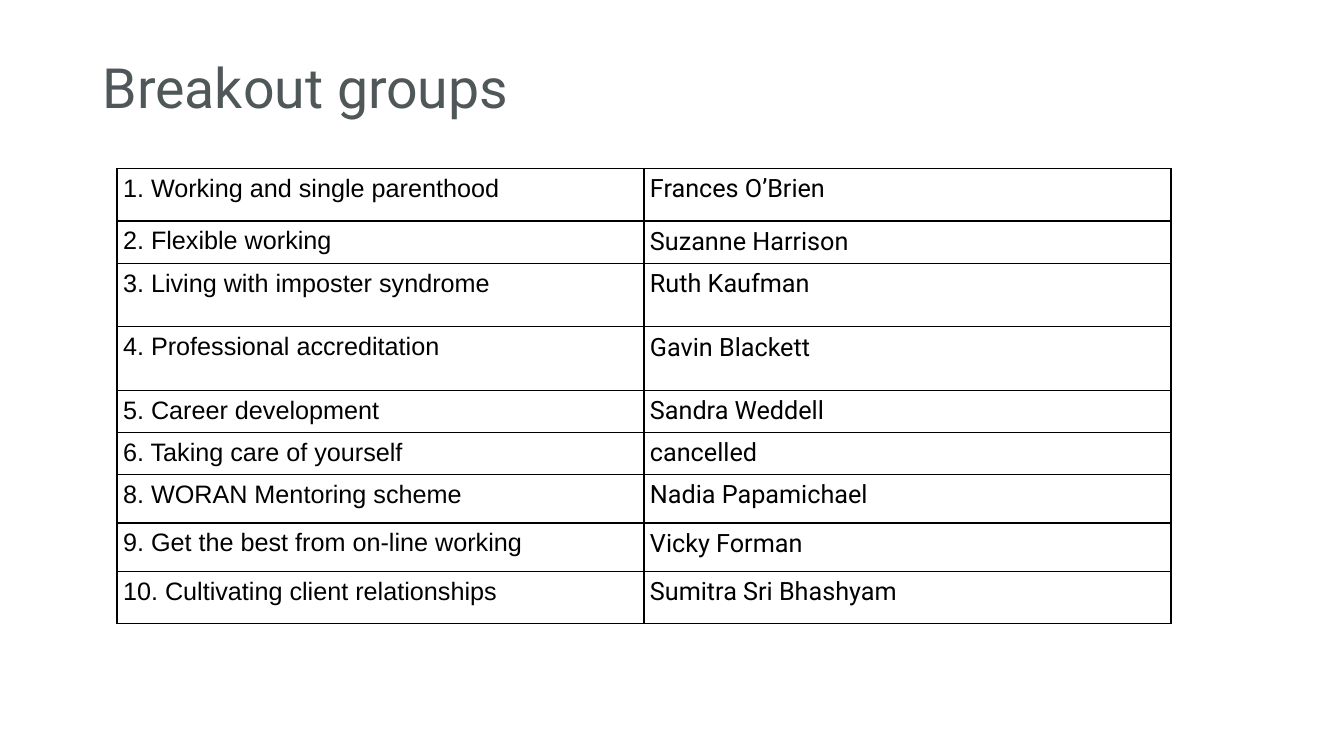
import lxml.etree
import pptx
import pptx.dml.color
import pptx.enum.text
import pptx.oxml.ns
import pptx.util
from pptx.util import Cm

COLOURS = {"title": "505759", "text": "000000", "border": "000000"}
COLUMN_FONTS = ("Arial", "Roboto")
COLUMN_WIDTH = 13.28
CELL_MARGIN = Cm(0.15)
GROUPS = [
    ("1. Working and single parenthood", "Frances O’Brien", 1.32),
    ("2. Flexible working", "Suzanne Harrison", 0.94),
    ("3. Living with imposter syndrome", "Ruth Kaufman", 1.6),
    ("4. Professional accreditation", "Gavin Blackett", 1.6),
    ("5. Career development", "Sandra Weddell", 1.02),
    ("6. Taking care of yourself", "cancelled", 1.02),
    ("8. WORAN Mentoring scheme", "Nadia Papamichael", 1.22),
    ("9. Get the best from on-line working", "Vicky Forman", 1.22),
    ("10. Cultivating client relationships", "Sumitra Sri Bhashyam", 1.32),
]


def format_text(paragraph, font_name, size, colour):
    """Set the font, size and colour of every run in a paragraph."""
    for span in paragraph.runs:
        span.font.name = font_name
        span.font.size = pptx.util.Pt(size)
        span.font.color.rgb = pptx.dml.color.RGBColor.from_string(COLOURS[colour])


def add_title(page, text):
    """Add the slide heading."""
    box = page.shapes.add_textbox(Cm(2.34), Cm(1.35), Cm(29.21), Cm(1.85))
    frame = box.text_frame
    frame.word_wrap = True
    frame.vertical_anchor = pptx.enum.text.MSO_ANCHOR.MIDDLE
    frame.text = text
    frame.paragraphs[0].line_spacing = 0.9
    format_text(frame.paragraphs[0], "Roboto", 39.6, "title")


def add_borders(cell):
    """Draw a thin line on all four sides of a cell."""
    properties = cell._tc.get_or_add_tcPr()
    qn = pptx.oxml.ns.qn
    for side in ("a:lnL", "a:lnR", "a:lnT", "a:lnB"):
        line = lxml.etree.SubElement(properties, qn(side), w=str(pptx.util.Pt(1)))
        fill = lxml.etree.SubElement(line, qn("a:solidFill"))
        lxml.etree.SubElement(fill, qn("a:srgbClr"), val=COLOURS["border"])


def fill_cell(cell, text, font_name):
    """Write one table cell with its margins, borders and font."""
    cell.margin_left = cell.margin_right = CELL_MARGIN
    cell.margin_top = cell.margin_bottom = CELL_MARGIN
    add_borders(cell)
    cell.fill.background()
    cell.text_frame.text = text
    format_text(cell.text_frame.paragraphs[0], font_name, 18, "text")


def add_group_table(page, groups):
    """Add the table of breakout groups and their leaders."""
    height = sum(group[2] for group in groups)
    table = page.shapes.add_table(
        len(groups), len(COLUMN_FONTS), Cm(2.95), Cm(4.25),
        Cm(COLUMN_WIDTH * len(COLUMN_FONTS)), Cm(height)).table
    table.first_row = False
    table.horz_banding = False
    for column in table.columns:
        column.width = Cm(COLUMN_WIDTH)
    for row, (topic, leader, row_height) in zip(table.rows, groups):
        row.height = Cm(row_height)
        for cell, text, font_name in zip(row.cells, (topic, leader), COLUMN_FONTS):
            fill_cell(cell, text, font_name)


def main():
    """Build and save the slide."""
    deck = pptx.Presentation()
    deck.slide_width = Cm(33.87)
    deck.slide_height = Cm(19.05)
    page = deck.slides.add_slide(deck.slide_layouts[6])
    add_title(page, "Breakout groups")
    add_group_table(page, GROUPS)
    deck.save("out.pptx")


if __name__ == "__main__":
    main()
